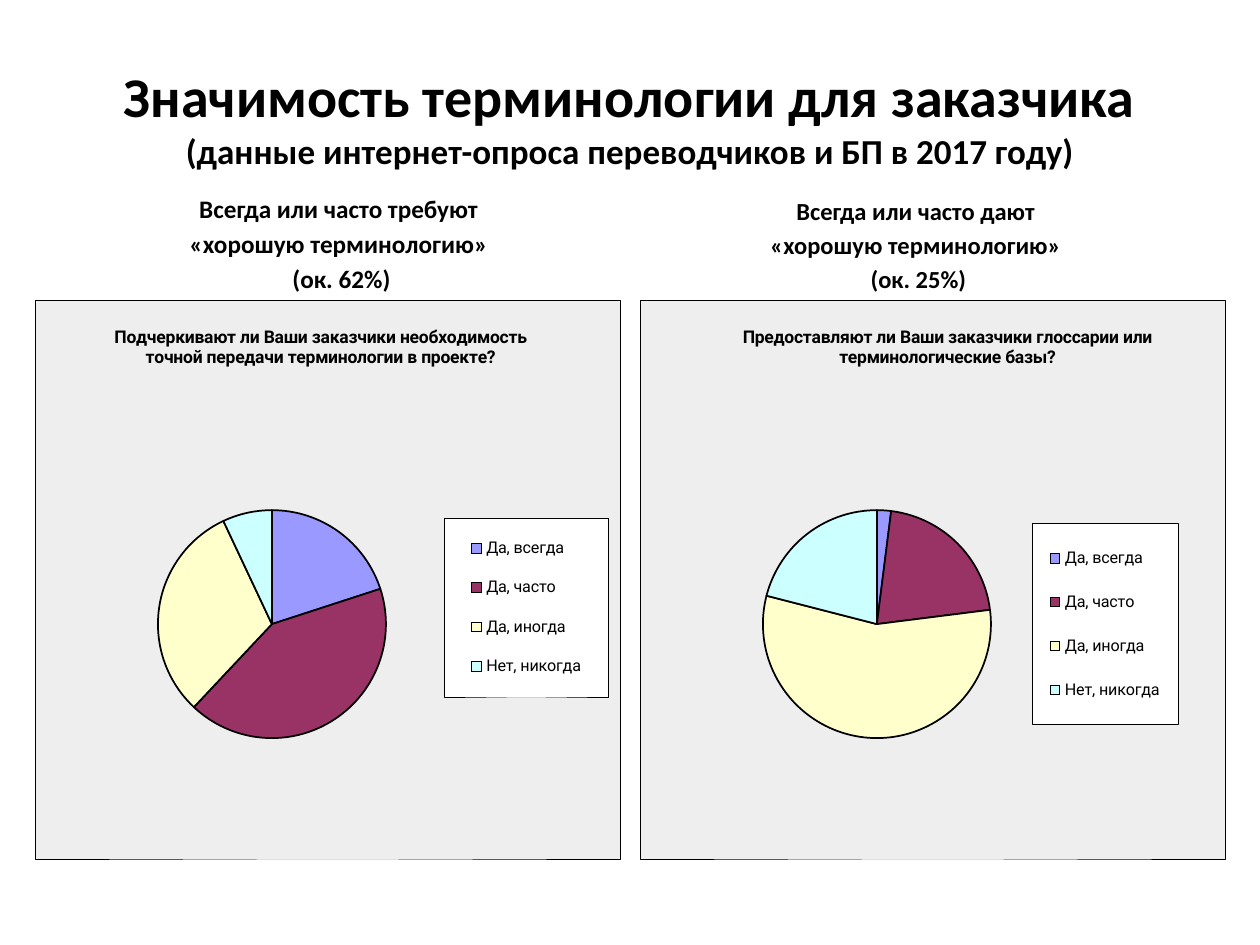
from dataclasses import dataclass

from pptx import Presentation
from pptx.chart.data import CategoryChartData as Data
from pptx.dml.color import RGBColor as Rgb
from pptx.enum.chart import XL_CHART_TYPE as Kind, XL_LEGEND_POSITION as Side
from pptx.enum.text import MSO_ANCHOR as Anchor, PP_ALIGN as Align
from pptx.oxml import parse_xml
from pptx.oxml.ns import nsdecls, qn
from pptx.util import Emu, Pt

SCALE = 914400 / 126
BLACK = Rgb(0x00, 0x00, 0x00)
WHITE = Rgb(0xFF, 0xFF, 0xFF)
GREY = Rgb(0xEE, 0xEE, 0xEE)
BLUE = Rgb(0x99, 0x99, 0xFF)
PLUM = Rgb(0x99, 0x33, 0x66)
CREAM = Rgb(0xFF, 0xFF, 0xCC)
AQUA = Rgb(0xCC, 0xFF, 0xFF)
HUES = (BLUE, PLUM, CREAM, AQUA)
CATS = ("Да, всегда", "Да, часто", "Да, иногда", "Нет, никогда")
PLOT = (0.21, 0.25, 0.39, 0.66)


@dataclass(frozen=True)
class Box:
    """Place on the slide in px."""
    left: int
    top: int
    width: int
    height: int

    def emu(self) -> list[Emu]:
        """Give the place in EMU."""
        return [px(n) for n in (self.left, self.top, self.width, self.height)]


@dataclass(frozen=True)
class Survey:
    """One question with its heading and answers."""
    head: Box
    lines: tuple
    size: float
    box: Box
    title: str
    start: tuple
    key: tuple
    vals: tuple


SURVEYS = (
    Survey(Box(63, 195, 557, 105),
           ("Всегда или часто требуют ", "«хорошую терминологию» ", "(ок. 62%)"),
           14.4, Box(35, 300, 585, 559),
           "Подчеркивают ли Ваши заказчики необходимость точной передачи терминологии в проекте?",
           (0.13, 0.04), (0.7, 0.39, 0.28, 0.32), (20, 42, 31, 7)),
    Survey(Box(640, 185, 557, 115),
           ("Всегда или часто дают ", "«хорошую терминологию» ", "(ок. 25%)"),
           14, Box(640, 300, 585, 559),
           "Предоставляют ли Ваши заказчики глоссарии или терминологические базы?",
           (0.17, 0.04), (0.67, 0.4, 0.25, 0.36), (2, 21, 56, 21)),
)


def px(count: int) -> Emu:
    """Turn px into EMU."""
    return Emu(round(count * SCALE))


def style(font, size: float, name: str, bold: bool) -> None:
    """Set a font in black."""
    font.size, font.name, font.bold = Pt(size), name, bold
    font.color.rgb = BLACK


def write(slide, box: Box, paras: tuple, *, anchor: Anchor, gap: float = 0) -> None:
    """Add centred bold text; each paragraph is a tuple of (line, size)."""
    frame = slide.shapes.add_textbox(*box.emu()).text_frame
    frame.word_wrap, frame.vertical_anchor = True, anchor
    for num, lines in enumerate(paras):
        para = frame.add_paragraph() if num else frame.paragraphs[0]
        para.alignment, para.space_before = Align.CENTER, Pt(gap)
        for row, (text, size) in enumerate(lines):
            if row:
                para.add_line_break()
            run = para.add_run()
            run.text = text
            style(run.font, size, "Calibri", True)


def place(part, spot: tuple) -> None:
    """Fix the layout of a chart part by fractions of the chart."""
    for old in part.findall(qn("c:layout")):
        part.remove(old)
    inner = part.tag == qn("c:plotArea")
    target = '<c:layoutTarget val="inner"/>' if inner else ""
    modes = "".join(f'<c:{n}Mode val="edge"/>' for n in "xy")
    sizes = "".join(f'<c:{n} val="{v}"/>' for n, v in zip("xywh", spot))
    node = parse_xml(f'<c:layout {nsdecls("c")}><c:manualLayout>{target}{modes}'
                     f'{sizes}</c:manualLayout></c:layout>')
    if inner:
        part.insert(0, node)
    else:
        part.find(qn("c:overlay")).addprevious(node)


def panel(fill: Rgb, edge: bool = True):
    """Make the fill and thin border of a chart part."""
    paint = f'<a:solidFill><a:srgbClr val="{BLACK}"/></a:solidFill>' if edge else "<a:noFill/>"
    return parse_xml(f'<c:spPr {nsdecls("c", "a")}><a:solidFill><a:srgbClr val="{fill}"/>'
                     f'</a:solidFill><a:ln w="3175">{paint}</a:ln></c:spPr>')


def draw(slide, item: Survey) -> None:
    """Draw a heading and its pie chart."""
    paras = tuple(((line, item.size),) for line in item.lines)
    write(slide, item.head, paras, anchor=Anchor.BOTTOM, gap=item.size / 5)
    data = Data()
    data.categories = CATS
    data.add_series("Series 1", item.vals)
    chart = slide.shapes.add_chart(Kind.PIE, *item.box.emu(), data).chart
    style(chart.font, 10, "Roboto", False)
    chart.has_title = chart.has_legend = True
    frame = chart.chart_title.text_frame
    frame.text = item.title
    style(frame.paragraphs[0].runs[0].font, 10, "Roboto", True)
    legend = chart.legend
    legend.position, legend.include_in_layout = Side.RIGHT, False
    style(legend.font, 9.2, "Roboto", False)
    plot = chart.plots[0]
    plot.vary_by_categories = True
    for num, hue in enumerate(HUES):
        form = plot.series[0].points[num].format
        form.fill.solid()
        form.fill.fore_color.rgb = hue
        form.line.color.rgb, form.line.width = BLACK, Pt(1)
    root = chart.element.find(qn("c:chart"))
    title, area, key = (root.find(qn(f"c:{n}")) for n in ("title", "plotArea", "legend"))
    for part, spot in ((title, item.start), (area, PLOT), (key, item.key)):
        place(part, spot)
    root.addnext(panel(GREY))
    area.append(panel(GREY, False))
    key.find(qn("c:overlay")).addnext(panel(WHITE))


def main() -> None:
    """Build the slide."""
    deck = Presentation()
    deck.slide_width, deck.slide_height = px(1260), px(945)
    slide = deck.slides.add_slide(deck.slide_layouts[6])
    title = (("Значимость терминологии для заказчика", 32),
             ("(данные интернет-опроса переводчиков и БП в 2017 году)", 20))
    write(slide, Box(63, 38, 1134, 157), (title,), anchor=Anchor.MIDDLE)
    for item in SURVEYS:
        draw(slide, item)
    deck.save("out.pptx")


if __name__ == "__main__":
    main()
